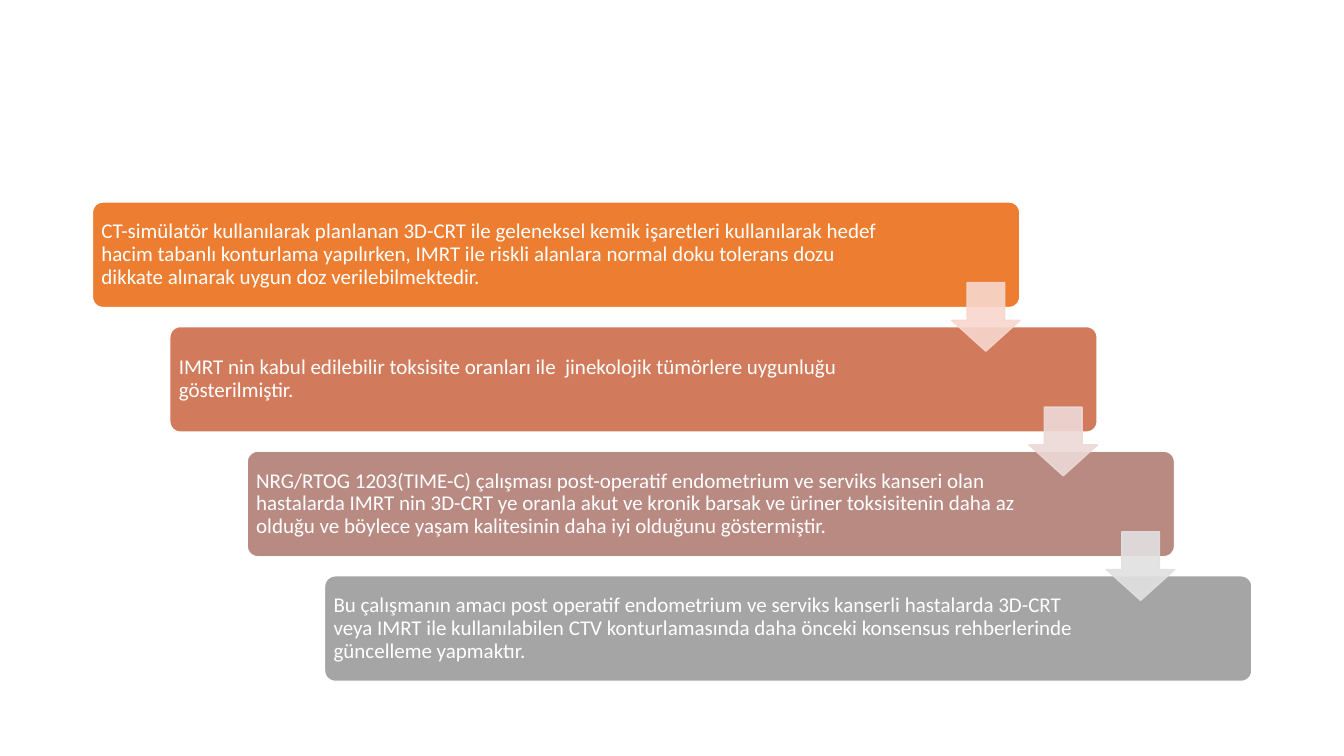
from lxml.etree import SubElement
from pptx import Presentation
from pptx.dml.color import RGBColor
from pptx.enum.shapes import MSO_SHAPE
from pptx.enum.text import MSO_ANCHOR, PP_ALIGN
from pptx.oxml.ns import qn
from pptx.util import Cm, Pt

WHITE = RGBColor(0xFF, 0xFF, 0xFF)
ORANGE = RGBColor(0xED, 0x7D, 0x31)
TERRACOTTA = RGBColor(0xD1, 0x7B, 0x5C)
DUSTY_ROSE = RGBColor(0xB9, 0x8A, 0x82)
GRAY = RGBColor(0xA5, 0xA5, 0xA5)
PALE_ORANGE = RGBColor(0xF8, 0xD7, 0xCE)
PALE_ROSE = RGBColor(0xED, 0xD9, 0xD7)
PALE_GRAY = RGBColor(0xE1, 0xE1, 0xE1)

# Text, box colour, right text margin in cm
STEPS = [
    ("CT-simülatör kullanılarak planlanan 3D-CRT ile geleneksel kemik işaretleri "
     "kullanılarak hedef hacim tabanlı konturlama yapılırken, IMRT ile riskli alanlara "
     "normal doku tolerans dozu dikkate alınarak uygun doz verilebilmektedir.",
     ORANGE, 3.1),
    ("IMRT nin kabul edilebilir toksisite oranları ile  jinekolojik tümörlere "
     "uygunluğu gösterilmiştir.",
     TERRACOTTA, 3.84),
    ("NRG/RTOG 1203(TIME-C) çalışması post-operatif endometrium ve serviks kanseri olan "
     "hastalarda IMRT nin 3D-CRT ye oranla akut ve kronik barsak ve üriner toksisitenin "
     "daha az olduğu ve böylece yaşam kalitesinin daha iyi olduğunu göstermiştir.",
     DUSTY_ROSE, 3.84),
    ("Bu çalışmanın amacı post operatif endometrium ve serviks kanserli hastalarda 3D-CRT "
     "veya IMRT ile kullanılabilen CTV konturlamasında daha önceki konsensus "
     "rehberlerinde güncelleme yapmaktır.",
     GRAY, 3.84),
]
ARROW_COLORS = [PALE_ORANGE, PALE_ROSE, PALE_GRAY]

LEFT, TOP = 2.33, 5.09
STEP_X, STEP_Y = 1.95, 3.14
BOX_WIDTH, BOX_HEIGHT = 23.37, 2.66
ARROW_X, ARROW_Y, ARROW_SIZE = 21.65, 2.03, 1.73
MARGIN = 0.15


def add_filled_shape(slide, kind, left, top, width, height, adjustments, fill, line):
    shape = slide.shapes.add_shape(kind, Cm(left), Cm(top), Cm(width), Cm(height))
    shape.shadow.inherit = False
    for index, value in enumerate(adjustments):
        shape.adjustments[index] = value
    shape.fill.solid()
    shape.fill.fore_color.rgb = fill
    shape.line.color.rgb = line
    shape.line.width = Pt(1)
    return shape


def set_opacity(shape, percent):
    """Apply the opacity to both the fill and the outline."""
    for color in shape.element.spPr.iter(qn("a:srgbClr")):
        SubElement(color, qn("a:alpha"), val=str(percent * 1000))


def write_text(shape, text, *, size, color, font, right_margin):
    frame = shape.text_frame
    frame.word_wrap = True
    frame.vertical_anchor = MSO_ANCHOR.MIDDLE
    frame.margin_left = frame.margin_top = frame.margin_bottom = Cm(MARGIN)
    frame.margin_right = Cm(right_margin)
    paragraph = frame.paragraphs[0]
    paragraph.alignment = PP_ALIGN.LEFT
    paragraph.line_spacing = 0.9
    run = paragraph.add_run()
    run.text = text
    run.font.size = Pt(size)
    run.font.name = font
    run.font.color.rgb = color


def main():
    presentation = Presentation()
    presentation.slide_width = Cm(33.87)
    presentation.slide_height = Cm(19.05)
    slide = presentation.slides.add_slide(presentation.slide_layouts[6])

    for index, (text, color, right_margin) in enumerate(STEPS):
        box = add_filled_shape(
            slide, MSO_SHAPE.ROUNDED_RECTANGLE,
            LEFT + index * STEP_X, TOP + index * STEP_Y, BOX_WIDTH, BOX_HEIGHT,
            [0.1], color, WHITE)
        write_text(box, text, size=15, color=WHITE, font="Calibri",
                   right_margin=right_margin)

    for index, color in enumerate(ARROW_COLORS):
        arrow = add_filled_shape(
            slide, MSO_SHAPE.DOWN_ARROW,
            LEFT + ARROW_X + index * STEP_X, TOP + ARROW_Y + index * STEP_Y,
            ARROW_SIZE, ARROW_SIZE, [0.55, 0.45], color, color)
        set_opacity(arrow, 90)

    presentation.save("out.pptx")


if __name__ == "__main__":
    main()
